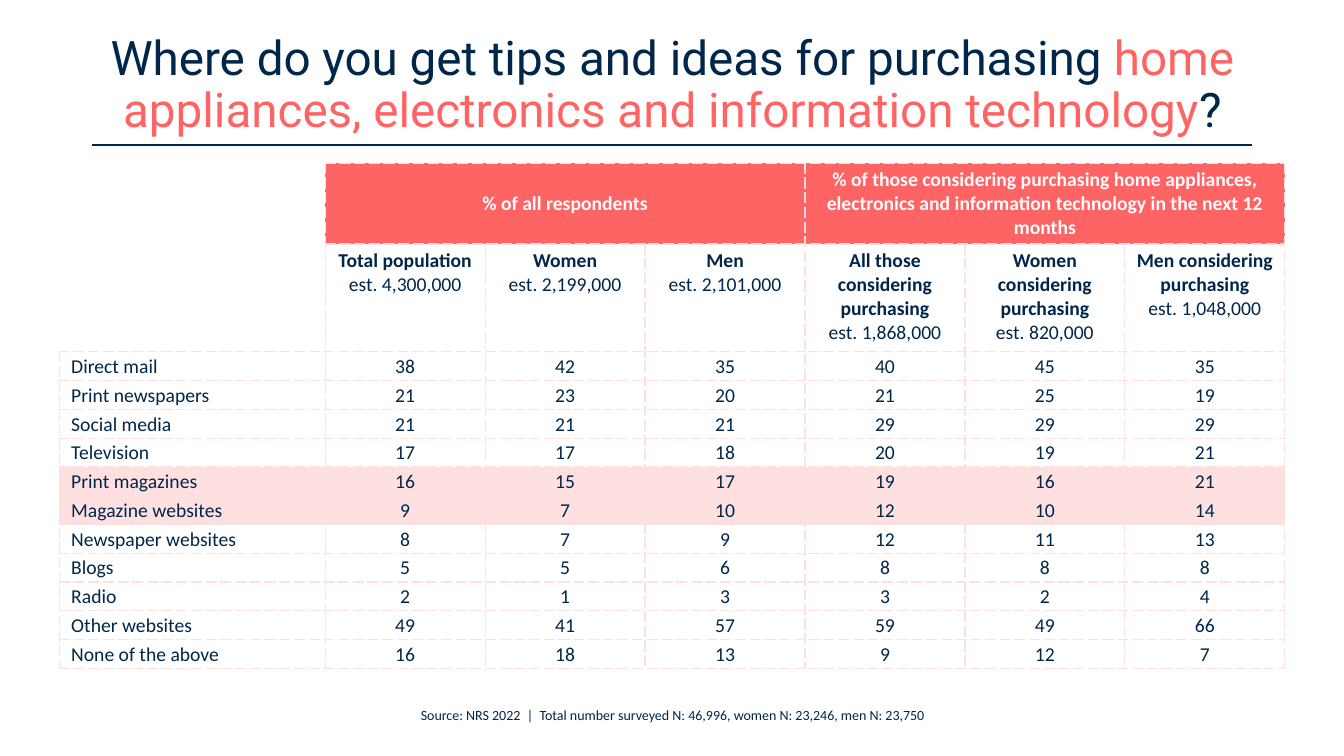
from lxml import etree
from pptx import Presentation
from pptx import util as u
from pptx.dml.color import RGBColor
from pptx.enum import shapes, text
from pptx.oxml.ns import qn

SLIDE_W, SLIDE_H = 13.33, 7.5
COLORS = {"navy": "002649", "coral": "FF6464", "blush": "FFE0E0", "white": "FEFCFF"}
LABEL_COL, DATA_COL = 19.8, 11.9
GROUP_ROW, HEAD_ROW, BODY_ROW = 9.47, 14.27, 3.81

GROUPS = [
    "% of all respondents",
    "% of those considering purchasing home appliances, electronics "
    "and information technology in the next 12 months",
]
HEADS = [
    ("Total population", "est. 4,300,000"),
    ("Women", "est. 2,199,000"),
    ("Men", "est. 2,101,000"),
    ("All those considering purchasing", "est. 1,868,000"),
    ("Women considering purchasing", "est. 820,000"),
    ("Men considering purchasing", "est. 1,048,000"),
]
SOURCES = [
    ("Direct mail", 38, 42, 35, 40, 45, 35),
    ("Print newspapers", 21, 23, 20, 21, 25, 19),
    ("Social media", 21, 21, 21, 29, 29, 29),
    ("Television", 17, 17, 18, 20, 19, 21),
    ("Print magazines", 16, 15, 17, 19, 16, 21),
    ("Magazine websites", 9, 7, 10, 12, 10, 14),
    ("Newspaper websites", 8, 7, 9, 12, 11, 13),
    ("Blogs", 5, 5, 6, 8, 8, 8),
    ("Radio", 2, 1, 3, 3, 2, 4),
    ("Other websites", 49, 41, 57, 59, 49, 66),
    ("None of the above", 16, 18, 13, 9, 12, 7),
]
HIGHLIGHTED = {"Print magazines", "Magazine websites"}


def x(percent):
    return u.Inches(SLIDE_W * percent / 100)


def y(percent):
    return u.Inches(SLIDE_H * percent / 100)


def rgb(name):
    return RGBColor.from_string(COLORS[name])


def style(r, size, color="navy", font="Calibri", bold=False):
    r.font.size = u.Pt(size)
    r.font.name = font
    r.font.bold = bold
    r.font.color.rgb = rgb(color)


def text_box(s, left, top, width, height):
    tf = s.shapes.add_textbox(x(left), y(top), x(width), y(height)).text_frame
    p = tf.paragraphs[0]
    p.alignment = text.PP_ALIGN.CENTER
    return tf, p


def add_title(s):
    tf, p = text_box(s, 6.9, 4.27, 86.25, 14.27)
    tf.word_wrap = True
    tf.vertical_anchor = text.MSO_ANCHOR.MIDDLE
    p.line_spacing = 0.9
    for words, color in [
        ("Where do you get tips and ideas for purchasing ", "navy"),
        ("home appliances, electronics and information technology", "coral"),
        ("?", "navy"),
    ]:
        r = p.add_run()
        r.text = words
        style(r, 34, color, "Roboto")


def add_rule(s):
    line = s.shapes.add_connector(
        shapes.MSO_CONNECTOR.STRAIGHT, x(6.83), y(19.2), x(93.17), y(19.2))
    line.line.color.rgb = rgb("navy")
    line.line.width = u.Pt(1)
    etree.SubElement(line._element.spPr, qn("a:effectLst"))


def add_source(s):
    tf, p = text_box(s, 28.66, 92.8, 42.75, 3.6)
    tf.word_wrap = False
    tf.auto_size = text.MSO_AUTO_SIZE.SHAPE_TO_FIT_TEXT
    p.text = "Source: NRS 2022  |  Total number surveyed N: 46,996, women N: 23,246, men N: 23,750"
    style(p.runs[0], 10)


def dash_borders(cell, sides):
    tcPr = cell._tc.get_or_add_tcPr()
    for side in sides:
        ln = etree.SubElement(tcPr, qn(f"a:ln{side}"), w=str(u.Pt(1)))
        fill = etree.SubElement(ln, qn("a:solidFill"))
        etree.SubElement(fill, qn("a:srgbClr"), val=COLORS["blush"])
        etree.SubElement(ln, qn("a:prstDash"), val="sysDash")


def fill_cell(cell, color):
    if color:
        cell.fill.solid()
        cell.fill.fore_color.rgb = rgb(color)
    else:
        cell.fill.background()


def write_cell(cell, words, color="navy", bold=False, centered=True, middle=True):
    p = cell.text_frame.paragraphs[0]
    p.text = words
    if centered:
        p.alignment = text.PP_ALIGN.CENTER
    if middle:
        cell.vertical_anchor = text.MSO_ANCHOR.MIDDLE
    for i, r in enumerate(p.runs):
        style(r, 14, color, bold=bold and i == 0)
    for br in p._p.findall(qn("a:br")):
        etree.SubElement(br, qn("a:rPr"), sz="1400")


def write_body_row(table, row, values):
    for col, value in enumerate(values):
        cell = table.cell(row, col)
        cell.margin_left = u.Inches(0.01 if col else 0.12)
        cell.margin_top = cell.margin_right = u.Inches(0.01)
        cell.margin_bottom = 0
        write_cell(cell, str(value), centered=col > 0)
        fill_cell(cell, "blush" if values[0] in HIGHLIGHTED else None)


def add_table(s):
    widths = [LABEL_COL] + [DATA_COL] * len(HEADS)
    heights = [GROUP_ROW, HEAD_ROW] + [BODY_ROW] * len(SOURCES)
    table = s.shapes.add_table(
        len(heights), len(widths), x(4.4), y(21.6), x(sum(widths)), y(sum(heights))).table
    table.first_row = table.horz_banding = False
    for column, width in zip(table.columns, widths):
        column.width = x(width)
    for i, height in enumerate(heights):
        table.rows[i].height = y(height)
        for j in range(len(widths)):
            cell = table.cell(i, j)
            dash_borders(cell, "RB" if i < 2 and j == 0 else "LRTB")
            fill_cell(cell, "coral" if i == 0 and j else None)

    table.cell(0, 0).merge(table.cell(1, 0))
    for col, words in zip((1, 4), GROUPS):
        cell = table.cell(0, col)
        cell.merge(table.cell(0, col + 2))
        write_cell(cell, words, "white", bold=True)
    for col, head in enumerate(HEADS, 1):
        write_cell(table.cell(1, col), "\v".join(head), bold=True, middle=False)
    for row, values in enumerate(SOURCES, 2):
        write_body_row(table, row, values)


def main():
    prs = Presentation()
    prs.slide_width, prs.slide_height = u.Inches(SLIDE_W), u.Inches(SLIDE_H)
    s = prs.slides.add_slide(prs.slide_layouts[6])
    add_title(s)
    add_table(s)
    add_rule(s)
    add_source(s)
    prs.save("out.pptx")


if __name__ == "__main__":
    main()
